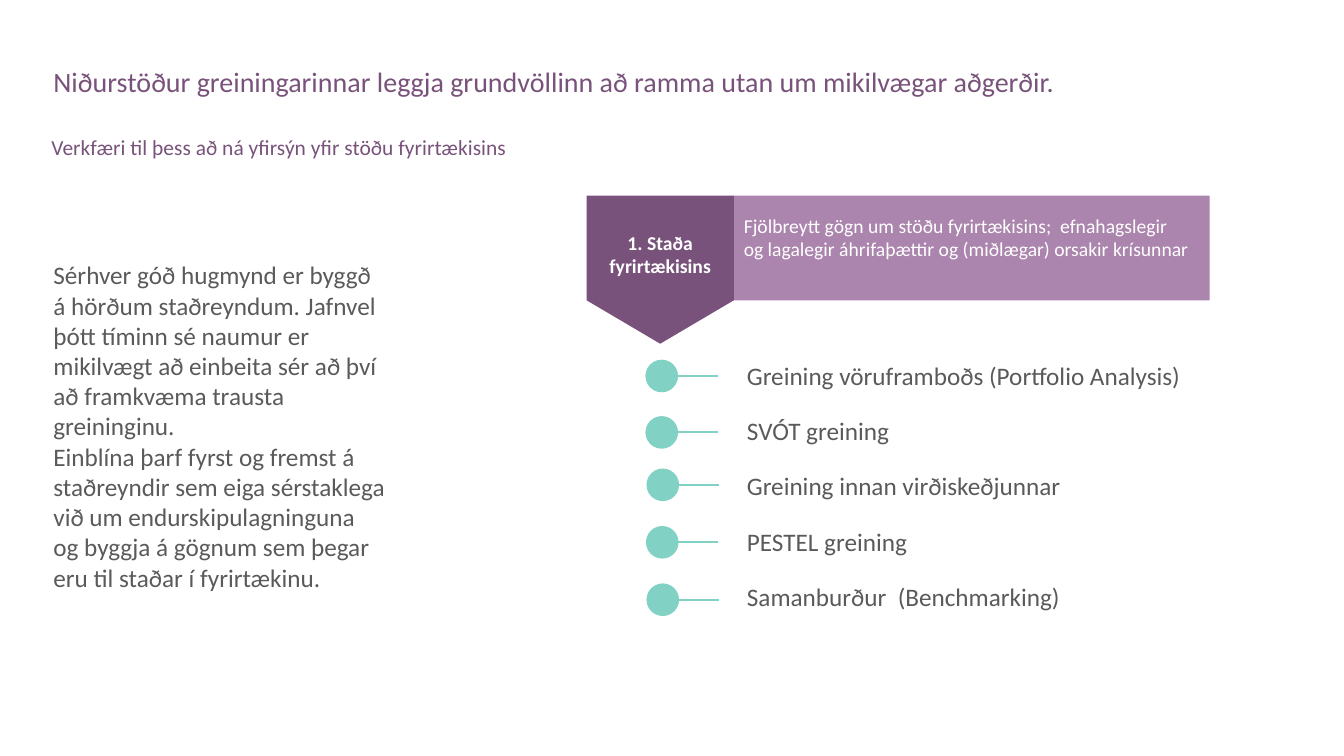
"""Build a slide on the tools that give an overview of a company's position."""
from dataclasses import dataclass

from lxml import etree
from pptx import Presentation
from pptx.dml.color import RGBColor
from pptx.enum.shapes import MSO_CONNECTOR, MSO_SHAPE
from pptx.enum.text import MSO_ANCHOR, MSO_AUTO_SIZE, PP_ALIGN
from pptx.oxml.ns import qn
from pptx.util import Inches, Pt

RECTANGLE, OVAL = MSO_SHAPE.RECTANGLE, MSO_SHAPE.OVAL
STRAIGHT = MSO_CONNECTOR.STRAIGHT
TOP, MIDDLE = MSO_ANCHOR.TOP, MSO_ANCHOR.MIDDLE
LEFT, CENTER = PP_ALIGN.LEFT, PP_ALIGN.CENTER
NO_AUTOFIT = MSO_AUTO_SIZE.NONE

COLORS = {"plum": "79527B", "mauve": "AB85AD", "mint": "81D1C5",
          "gray": "595A59", "white": "FFFFFF"}
FONT = "Calibri"
CELL = Inches(0.1)
COLUMNS, ROWS = 133.33, 75
COMPARISON_LAYOUT = 4

BANNER_LEFT, BANNER_SPLIT, BANNER_RIGHT = 58.2, 72.8, 120
BANNER_TOP, BANNER_BOTTOM, ARROW_TIP = 19.4, 29.8, 34.1
DOT_SIZE, LINE_LENGTH = 3.1, 4


@dataclass(frozen=True)
class Box:
    left: float
    top: float
    width: float
    height: float


@dataclass(frozen=True)
class TextStyle:
    size: float
    color: str
    bold: bool = False
    align: PP_ALIGN = LEFT
    anchor: MSO_ANCHOR = TOP
    line_spacing: float = 1.0
    gap: float = 0
    numbered: bool = False


@dataclass(frozen=True)
class Tool:
    label: str
    dot_left: float
    center: float


TOOLS = [
    Tool("Greining vöruframboðs (Portfolio Analysis)", 64.1, 37.3),
    Tool("SVÓT greining", 64.1, 42.9),
    Tool("Greining innan virðiskeðjunnar", 64.2, 48.1),
    Tool("PESTEL greining", 64.15, 53.8),
    Tool("Samanburður  (Benchmarking)", 64.2, 59.5),
]


def cells(count: float) -> int:
    return round(count * CELL)


def frame(box: Box) -> tuple:
    return tuple(map(cells, (box.left, box.top, box.width, box.height)))


def rgb(name: str) -> RGBColor:
    return RGBColor.from_string(COLORS[name])


def set_bullet(paragraph, numbered: bool) -> None:
    properties = paragraph._p.get_or_add_pPr()
    properties.set("marL", "0")
    properties.set("indent", str(-CELL if numbered else 0))
    if numbered:
        bullet = etree.SubElement(properties, qn("a:buAutoNum"))
        bullet.set("type", "arabicPeriod")
    else:
        etree.SubElement(properties, qn("a:buNone"))


def write(shape, box: Box, texts: list[str], style: TextStyle) -> None:
    shape.left, shape.top, shape.width, shape.height = frame(box)
    text_frame = shape.text_frame
    text_frame.word_wrap = True
    text_frame.auto_size = NO_AUTOFIT
    text_frame.vertical_anchor = style.anchor
    for index, text in enumerate(texts):
        paragraph = text_frame.add_paragraph() if index else text_frame.paragraphs[0]
        paragraph.text = text
        set_bullet(paragraph, style.numbered)
        paragraph.alignment = style.align
        paragraph.line_spacing = style.line_spacing
        paragraph.space_before = Pt(style.gap if index else 0)
        paragraph.font.name = FONT
        paragraph.font.size = Pt(style.size)
        paragraph.font.bold = style.bold
        paragraph.font.color.rgb = rgb(style.color)


def add_text(slide, box: Box, text: str, style: TextStyle) -> None:
    write(slide.shapes.add_textbox(*frame(box)), box, [text], style)


def paint(shape, color: str) -> None:
    shape.shadow.inherit = False
    shape.fill.solid()
    shape.fill.fore_color.rgb = rgb(color)
    shape.line.fill.background()


def add_banner(slide) -> None:
    bar = Box(BANNER_SPLIT, BANNER_TOP, BANNER_RIGHT - BANNER_SPLIT,
              BANNER_BOTTOM - BANNER_TOP)
    paint(slide.shapes.add_shape(RECTANGLE, *frame(bar)), "mauve")
    corners = [(BANNER_SPLIT, BANNER_TOP), (BANNER_SPLIT, BANNER_BOTTOM),
               ((BANNER_LEFT + BANNER_SPLIT) / 2, ARROW_TIP),
               (BANNER_LEFT, BANNER_BOTTOM)]
    builder = slide.shapes.build_freeform(cells(BANNER_LEFT), cells(BANNER_TOP))
    builder.add_line_segments([(cells(x), cells(y)) for x, y in corners])
    paint(builder.convert_to_shape(), "plum")
    add_text(slide, Box(57.6, 22.4, 15.8, 5.7), " Staða fyrirtækisins",
             TextStyle(14, "white", bold=True, align=CENTER, numbered=True))
    add_text(slide, Box(BANNER_SPLIT, 20.7, 46.2, 8.1),
             "Fjölbreytt gögn um stöðu fyrirtækisins;  efnahagslegir og lagalegir "
             "áhrifaþættir og (miðlægar) orsakir krísunnar", TextStyle(14, "white"))


def add_marker(slide, tool: Tool) -> None:
    dot_box = Box(tool.dot_left, tool.center - DOT_SIZE / 2, DOT_SIZE, DOT_SIZE)
    dot = slide.shapes.add_shape(OVAL, *frame(dot_box))
    paint(dot, "mint")
    dot.line.color.rgb = rgb("mint")
    dot.line.width = Pt(1)
    start = tool.dot_left + DOT_SIZE
    line = slide.shapes.add_connector(
        STRAIGHT, *map(cells, (start, tool.center, start + LINE_LENGTH, tool.center)))
    line.line.color.rgb = rgb("mint")
    line.line.width = Pt(1.5)
    etree.SubElement(line._element.spPr, qn("a:effectLst"))


def main() -> None:
    presentation = Presentation()
    presentation.slide_width, presentation.slide_height = cells(COLUMNS), cells(ROWS)
    slide = presentation.slides.add_slide(presentation.slide_layouts[COMPARISON_LAYOUT])
    title, subtitle, body, spare, tool_list = slide.placeholders
    spare._element.getparent().remove(spare._element)

    write(title, Box(4.3, 6.3, 125.4, 6.4),
          ["Niðurstöður greiningarinnar leggja grundvöllinn að ramma utan um "
           "mikilvægar aðgerðir."], TextStyle(20, "plum", line_spacing=0.9))
    write(subtitle, Box(4.1, 13.5, 125.6, 2.8),
          ["Verkfæri til þess að ná yfirsýn yfir stöðu fyrirtækisins"],
          TextStyle(15.3, "plum", line_spacing=0.7))
    write(body, Box(4.3, 17.9, 34.9, 48.7),
          ["Sérhver góð hugmynd er byggð á hörðum staðreyndum. Jafnvel þótt tíminn "
           "sé naumur er mikilvægt að einbeita sér að því að framkvæma trausta "
           "greininginu.",
           "Einblína þarf fyrst og fremst á staðreyndir sem eiga sérstaklega við um "
           "endurskipulagninguna og byggja á gögnum sem þegar eru til staðar í "
           "fyrirtækinu."], TextStyle(18, "gray", anchor=MIDDLE))
    write(tool_list, Box(73.1, 35.2, 47.2, 26.3), [tool.label for tool in TOOLS],
          TextStyle(18, "gray", gap=18))
    add_banner(slide)
    for tool in TOOLS:
        add_marker(slide, tool)
    presentation.save("out.pptx")


if __name__ == "__main__":
    main()
